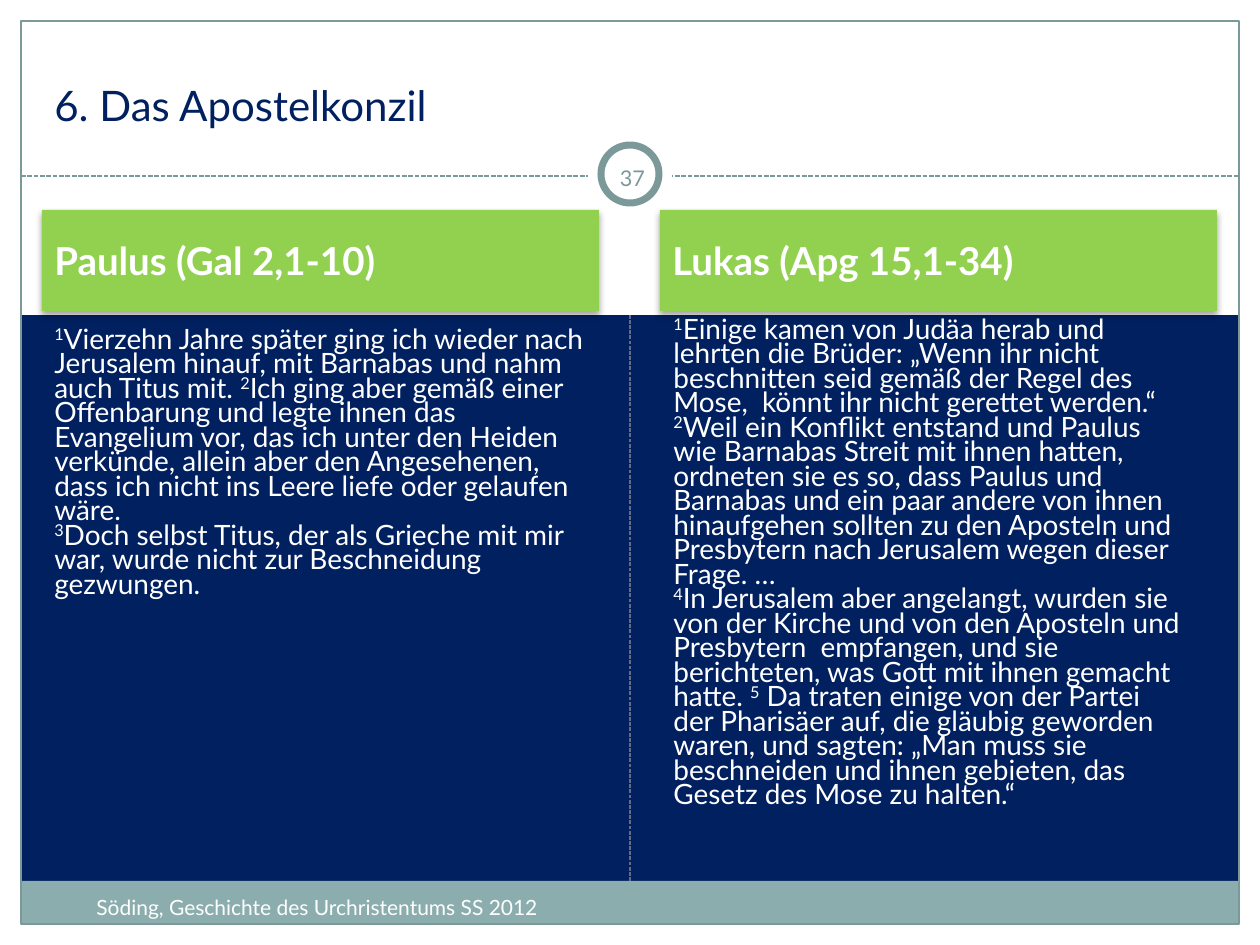
from lxml import etree
from pptx import Presentation
from pptx import util as u
from pptx.dml.color import RGBColor
from pptx.enum import dml, shapes, text
from pptx.oxml.ns import qn

PX = 914400 // 126
WIDTH, HEIGHT = 1260, 945
FONT = "Lato"
NAVY = RGBColor(0x00, 0x20, 0x60)
WHITE = RGBColor(0xFF, 0xFF, 0xFF)
GREEN = RGBColor(0x92, 0xD0, 0x50)
SAGE = RGBColor(0x8C, 0xAD, 0xAE)
TEAL = RGBColor(0x7C, 0x99, 0x9A)
SLATE = RGBColor(0x64, 0x6B, 0x86)

# Content: verse numbers stand between carets, line breaks are \n
TITLE = "6. Das Apostelkonzil"
PAGE_NUMBER = "37"
FOOTER = "Söding, Geschichte des Urchristentums SS 2012"
COLUMNS = [
    {
        "head": "Paulus (Gal 2,1-10)",
        "head_at": (42, 210, 557, 101),
        "body_at": (42, 324, 557, 527),
        "body": "^1^Vierzehn Jahre später ging ich wieder nach Jerusalem hinauf, mit "
                "Barnabas und nahm auch Titus mit. ^2^Ich ging aber gemäß einer "
                "Offenbarung und legte ihnen das Evangelium vor, das ich unter den "
                "Heiden verkünde, allein aber den Angesehenen, dass ich nicht ins "
                "Leere liefe oder gelaufen wäre.\n"
                "^3^Doch selbst Titus, der als Grieche mit mir war, wurde nicht zur "
                "Beschneidung gezwungen.",
    },
    {
        "head": "Lukas (Apg 15,1-34)",
        "head_at": (660, 210, 557, 101),
        "body_at": (661, 314, 536, 471),
        "body": "^1^Einige kamen von Judäa herab und lehrten die Brüder: „Wenn ihr "
                "nicht beschnitten seid gemäß der Regel des Mose,  könnt ihr nicht "
                "gerettet werden.“ ^2^Weil ein Konflikt entstand und Paulus wie "
                "Barnabas Streit mit ihnen hatten, ordneten sie es so, dass Paulus "
                "und Barnabas und ein paar andere von ihnen hinaufgehen sollten zu "
                "den Aposteln und Presbytern nach Jerusalem wegen dieser Frage. …\n"
                "^4^In Jerusalem aber angelangt, wurden sie von der Kirche und von "
                "den Aposteln und Presbytern  empfangen, und sie berichteten, was "
                "Gott mit ihnen gemacht hatte. ^5^ Da traten einige von der Partei "
                "der Pharisäer auf, die gläubig geworden waren, und sagten: „Man "
                "muss sie beschneiden und ihnen gebieten, das Gesetz des Mose zu "
                "halten.“",
    },
]


def emu(*lengths):
    return [u.Emu(length * PX) for length in lengths]


def add_box(page, at, fill=None, line=None, weight=0.75,
            kind=shapes.MSO_SHAPE.RECTANGLE):
    box = page.shapes.add_shape(kind, *emu(*at))
    box.shadow.inherit = False
    if fill is None:
        box.fill.background()
    else:
        box.fill.solid()
        box.fill.fore_color.rgb = fill
    if line is None:
        box.line.fill.background()
    else:
        box.line.color.rgb = line
        box.line.width = u.Pt(weight)
    return box


def add_dashes(page, ends, color, weight):
    line = page.shapes.add_connector(shapes.MSO_CONNECTOR.STRAIGHT, *emu(*ends))
    line.line.color.rgb = color
    line.line.width = u.Pt(weight)
    line.line.dash_style = dml.MSO_LINE.SQUARE_DOT
    etree.SubElement(line._element.spPr, qn("a:effectLst"))
    return line


def add_soft_shadow(box):
    effects = box._element.spPr.find(qn("a:effectLst"))
    shadow = etree.SubElement(effects, qn("a:outerShdw"), blurRad=str(u.Pt(4)),
                              dist=str(u.Pt(2)), dir="5400000", rotWithShape="0")
    color = etree.SubElement(shadow, qn("a:srgbClr"), val="000000")
    etree.SubElement(color, qn("a:alpha"), val="35000")


def write(box, words, size, color, bold=False, align=text.PP_ALIGN.LEFT,
          anchor=text.MSO_ANCHOR.TOP, spacing=None, inset=None):
    frame = box.text_frame
    frame.word_wrap = True
    frame.vertical_anchor = anchor
    if inset is not None:
        frame.margin_left = frame.margin_right = u.Inches(inset)
        frame.margin_top = frame.margin_bottom = u.Inches(inset)
    para = frame.paragraphs[0]
    para.alignment = align
    if spacing:
        para.line_spacing = u.Pt(spacing)
    for row, line in enumerate(words.split("\n")):
        if row:
            para.add_line_break()
        for index, part in enumerate(line.split("^")):
            if not part:
                continue
            span = para.add_run()
            span.text = part
            span.font.name = FONT
            span.font.size = u.Pt(size)
            span.font.bold = bold
            span.font.color.rgb = color
            if index % 2:
                span._r.get_or_add_rPr().set("baseline", "30000")


def add_text(page, at, words, size, color, **style):
    write(page.shapes.add_textbox(*emu(*at)), words, size, color, **style)


def main():
    deck = Presentation()
    deck.slide_width, deck.slide_height = emu(WIDTH, HEIGHT)
    page = deck.slides.add_slide(deck.slide_layouts[6])
    page.background.fill.solid()
    page.background.fill.fore_color.rgb = NAVY

    # White margins and title area
    for at in [(0, 0, WIDTH, 199), (0, 924, WIDTH, 21),
               (0, 0, 21, HEIGHT), (1239, 0, 21, HEIGHT)]:
        add_box(page, at, WHITE)

    # Heading band, footer band and the divider between them
    band = add_box(page, (21, 189, 1218, 126), WHITE)
    footer = add_box(page, (21, 881, 1218, 43), SAGE)
    divider = add_dashes(page, (630, 881, 630, 315), SLATE, 0.75)
    divider.begin_connect(footer, 0)
    divider.end_connect(band, 2)

    # Title rule, frame and page number ring
    add_dashes(page, (21, 176, 1239, 176), TEAL, 0.9)
    add_box(page, (21, 21, 1218, 903), line=TEAL)
    oval = shapes.MSO_SHAPE.OVAL
    add_box(page, (588, 132, 84, 84), WHITE, kind=oval)
    add_box(page, (601, 145, 58, 58), WHITE, TEAL, 4, kind=oval)

    # Title, page number and footer
    add_text(page, (42, 32, 1176, 104), TITLE, 24, NAVY,
             anchor=text.MSO_ANCHOR.BOTTOM)
    add_text(page, (596, 161, 73, 34), PAGE_NUMBER, 12.4, TEAL, inset=0.05,
             align=text.PP_ALIGN.CENTER, anchor=text.MSO_ANCHOR.MIDDLE)
    add_text(page, (84, 888, 747, 50), FOOTER, 12, WHITE)

    # The two accounts
    for column in COLUMNS:
        add_text(page, column["body_at"], column["body"], 16, WHITE, spacing=14)
        head = add_box(page, column["head_at"], GREEN)
        add_soft_shadow(head)
        write(head, column["head"], 22, WHITE, bold=True,
              anchor=text.MSO_ANCHOR.MIDDLE)

    deck.save("out.pptx")


if __name__ == "__main__":
    main()
